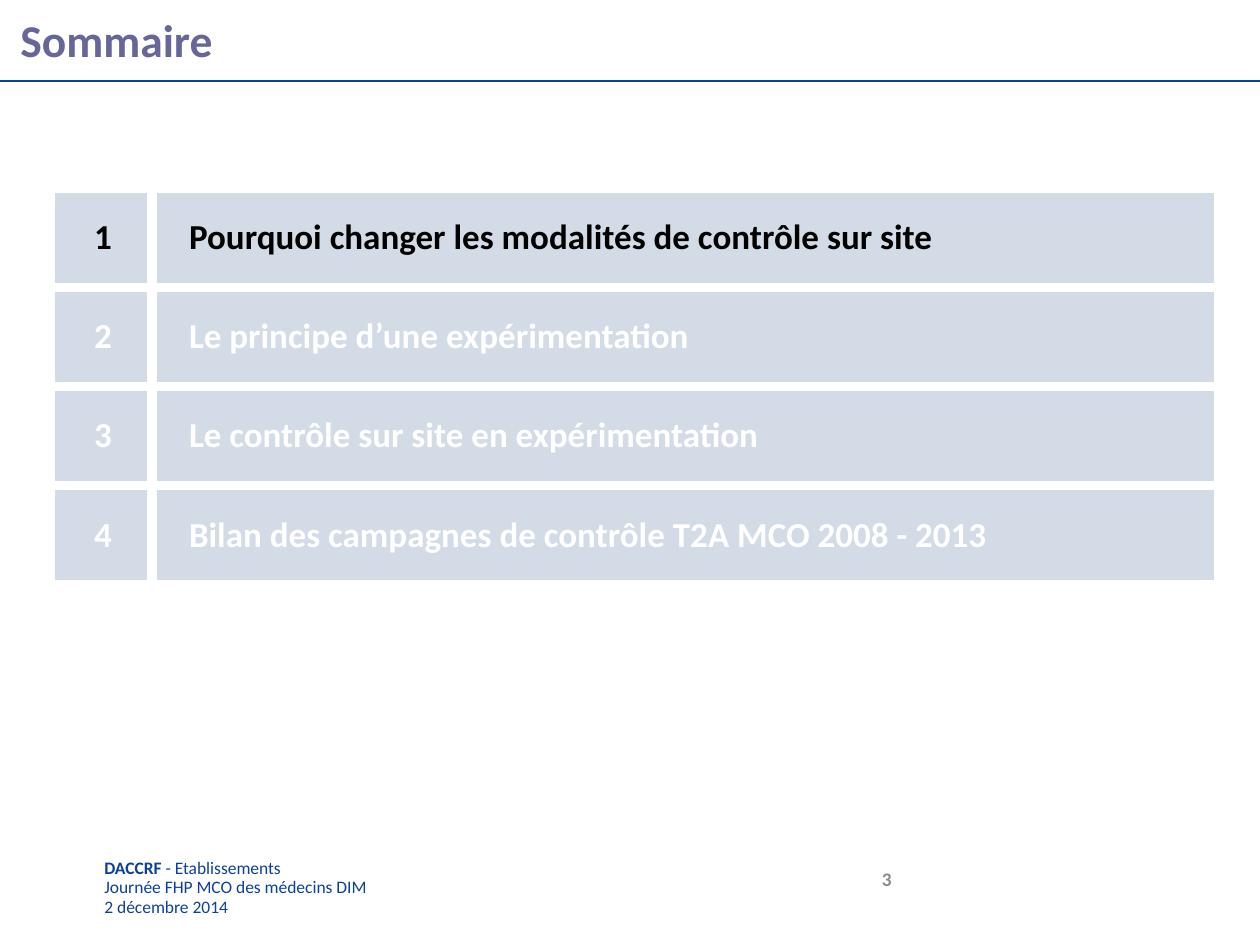
from lxml import etree
from pptx import Presentation
from pptx.dml.color import RGBColor
from pptx.enum.shapes import MSO_CONNECTOR
from pptx.enum.text import MSO_ANCHOR, PP_ALIGN
from pptx.oxml.ns import qn
from pptx.util import Pt

LINE = MSO_CONNECTOR.STRAIGHT
MIDDLE, TOP = MSO_ANCHOR.MIDDLE, MSO_ANCHOR.TOP
LEFT, CENTER, RIGHT = PP_ALIGN.LEFT, PP_ALIGN.CENTER, PP_ALIGN.RIGHT
EMU_PER_PX = 914400 / 126
COLORS = {"title": "666699", "navy": "0C419A", "band": "A9B9CF",
          "active": "000000", "white": "FFFFFF", "number": "8C8C8C"}
CHAPTERS = [
    "Pourquoi changer les modalités de contrôle sur site",
    "Le principe d’une expérimentation",
    "Le contrôle sur site en expérimentation",
    "Bilan des campagnes de contrôle T2A MCO 2008 - 2013",
]
FOOTER = [[("DACCRF ", True), ("- Etablissements", False)],
          [("Journée FHP MCO des médecins DIM", False)],
          [("2 décembre 2014", False)]]


def px(length):
    """Convert pixels to EMU."""
    return round(length * EMU_PER_PX)


def style(paragraph, size, color, bold=True, align=LEFT):
    """Set the font and alignment of a paragraph."""
    paragraph.alignment = align
    font = paragraph.font
    font.name, font.size, font.bold = "Calibri", Pt(size), bold
    font.color.rgb = RGBColor.from_string(COLORS[color])


def add_text_frame(slide, box, anchor):
    """Add a wrapping text box and return its text frame."""
    frame = slide.shapes.add_textbox(*map(px, box)).text_frame
    frame.word_wrap = True
    frame.vertical_anchor = anchor
    return frame


def add_label(slide, box, text, size, color, align=LEFT):
    """Add a single bold line centred vertically in its box."""
    paragraph = add_text_frame(slide, box, MIDDLE).paragraphs[0]
    paragraph.text = text
    style(paragraph, size, color, align=align)


def add_header(slide, box):
    """Add the title and the rule along the bottom of the box."""
    left, top, width, height = box
    add_label(slide, (left + 8, top + 6, width - 22, 66), "Sommaire", 26, "title")
    bottom = top + height
    rule = slide.shapes.add_connector(
        LINE, px(left), px(bottom), px(left + width), px(bottom))
    rule.line.width = Pt(1.5)
    rule.line.color.rgb = RGBColor.from_string(COLORS["navy"])
    etree.SubElement(rule._element.spPr, qn("a:effectLst"))


def format_cell(cell, sides):
    """Give a cell white borders on some sides and a half-transparent fill."""
    cell.fill.solid()
    cell.fill.fore_color.rgb = RGBColor.from_string(COLORS["band"])
    properties = cell._tc.get_or_add_tcPr()
    band = properties.find(qn("a:solidFill")).find(qn("a:srgbClr"))
    etree.SubElement(band, qn("a:alpha"), val="50000")
    for index, side in enumerate(sides):
        border = etree.Element(qn(f"a:ln{side}"), w=str(Pt(6)))
        fill = etree.SubElement(border, qn("a:solidFill"))
        etree.SubElement(fill, qn("a:srgbClr"), val=COLORS["white"])
        properties.insert(index, border)
    cell.vertical_anchor = MIDDLE
    cell.margin_left = cell.margin_right = px(13)
    cell.margin_top = cell.margin_bottom = px(13)


def add_agenda(slide, box, active):
    """Add the numbered chapters, with the active one in black."""
    _, _, width, height = box
    table = slide.shapes.add_table(len(CHAPTERS), 2, *map(px, box)).table
    table.first_row = table.horz_banding = False
    number_width = 98
    table.columns[0].width = px(number_width)
    table.columns[1].width = px(width - number_width)
    for number, (row, chapter) in enumerate(zip(table.rows, CHAPTERS), 1):
        row.height = px(height / len(CHAPTERS))
        color = "active" if number == active else "white"
        columns = ((str(number), CENTER, "RTB"), (chapter, LEFT, "LTB"))
        for cell, (text, align, sides) in zip(row.cells, columns):
            format_cell(cell, sides)
            paragraph = cell.text_frame.paragraphs[0]
            paragraph.text = text
            style(paragraph, 20, color, align=align)
        paragraph._p.get_or_add_pPr().set("marL", str(px(24)))


def add_footer(slide, box):
    """Add the event details and the slide number."""
    left, top, _, _ = box
    frame = add_text_frame(slide, (left, top + 4, 441, 68), TOP)
    for index, line in enumerate(FOOTER):
        paragraph = frame.add_paragraph() if index else frame.paragraphs[0]
        style(paragraph, 10, "navy", bold=False)
        paragraph.line_spacing = 0.6
        paragraph.space_before = Pt(4 if index else 0)
        for text, bold in line:
            run = paragraph.add_run()
            run.text = text
            if bold:
                run.font.bold = True
    add_label(slide, (left + 518, top, 294, 50), "3", 11, "number", RIGHT)


def main():
    """Build the agenda slide and save it."""
    deck = Presentation()
    deck.slide_width, deck.slide_height = px(1260), px(945)
    slide = deck.slides.add_slide(deck.slide_layouts[6])
    add_header(slide, (0, 0, 1260, 81))
    add_agenda(slide, (54, 188, 1161, 397), active=1)
    add_footer(slide, (92, 854, 812, 72))
    deck.save("out.pptx")


if __name__ == "__main__":
    main()
